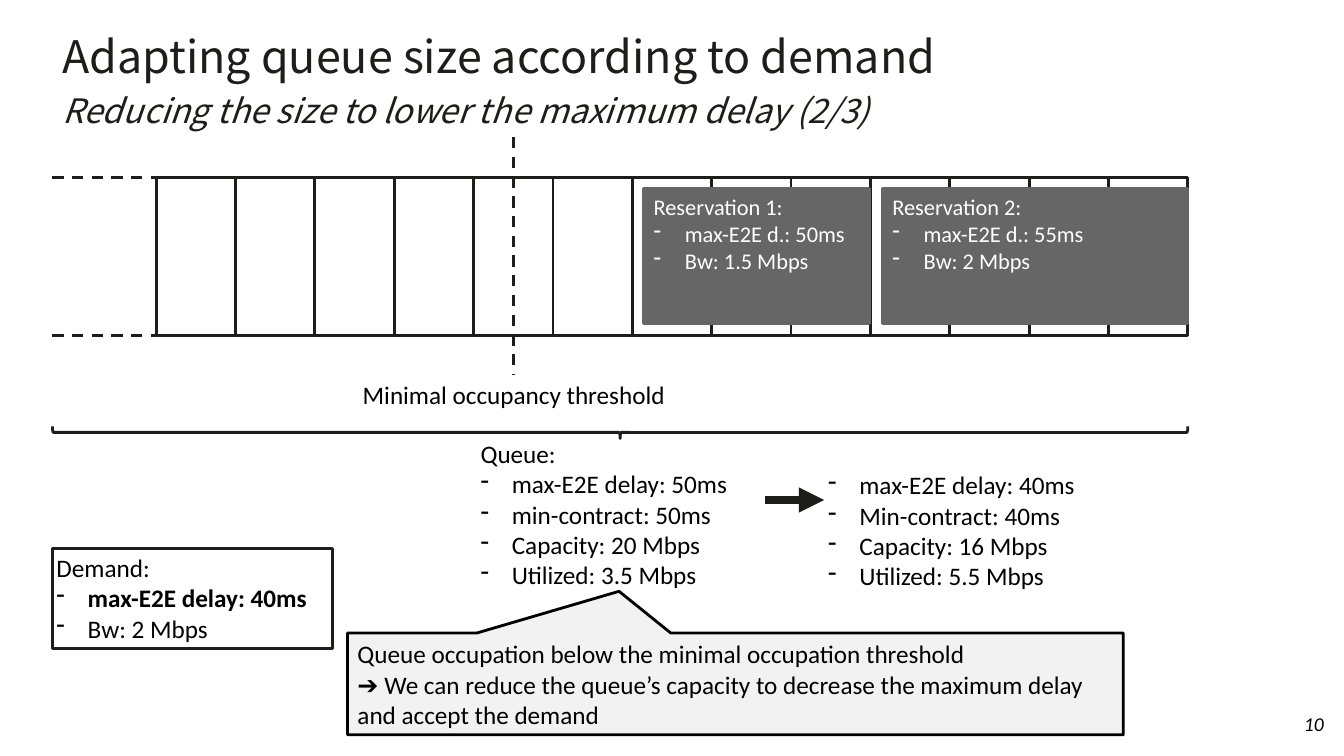
from pptx import Presentation
from pptx.dml.color import RGBColor
from pptx.enum.dml import MSO_LINE
from pptx.enum.shapes import MSO_CONNECTOR, MSO_SHAPE
from pptx.enum.text import MSO_ANCHOR, PP_ALIGN
from pptx.oxml.ns import qn
from pptx.util import Inches, Pt
from lxml.etree import SubElement

INK, BLACK, WHITE, GREY, PALE = "1D1D1A", "000000", "FFFFFF", "666666", "F2F2F2"

TITLE = [
    ("Adapting queue size according to demand", {}),
    ("Reducing the size to lower the maximum delay (2/3)", {"size": 24, "italic": True}),
]
BOOKED = [
    (8.76, 3.03, ["Reservation 2:", "- max-E2E d.: 55ms", "- Bw: 2 Mbps"]),
    (6.39, 2.24, ["Reservation 1:", "- max-E2E d.: 50ms", "- Bw: 1.5 Mbps"]),
]
DEMAND = ["Demand:", [("- max-E2E delay: 40ms", {"bold": True})], "- Bw: 2 Mbps"]
BEFORE = ["Queue:", "- max-E2E delay: 50ms", "- min-contract: 50ms",
          "- Capacity: 20 Mbps", "- Utilized: 3.5 Mbps"]
AFTER = ["- max-E2E delay: 40ms", "- Min-contract: 40ms",
         "- Capacity: 16 Mbps", "- Utilized: 5.5 Mbps"]
NOTE = ["Queue occupation below the minimal occupation threshold",
        "➔ We can reduce the queue’s capacity to decrease the maximum delay "
        "and accept the demand"]

LEFT, START, END = 0.52, 1.55, 11.79
TOP, HIGH, SLOTS = 1.76, 1.57, 13

deck = Presentation()
deck.slide_width, deck.slide_height = Inches(13.34), Inches(7.5)
slide = deck.slides.add_slide(deck.slide_layouts[6])
shapes = slide.shapes


def color(code):
    return RGBColor.from_string(code)


def bullet(para):
    props = para._p.get_or_add_pPr()
    props.set("marL", str(Inches(0.31)))
    props.set("indent", str(-Inches(0.31)))
    SubElement(props, qn("a:buChar")).set("char", "-")


def text(shape, lines, size=18, font="Calibri", ink=BLACK, bold=False, italic=False,
         align=PP_ALIGN.LEFT, anchor=MSO_ANCHOR.TOP, inset=(0, 0, 0, 0), space=None):
    frame = shape.text_frame
    frame.word_wrap = True
    frame.vertical_anchor = anchor
    (frame.margin_left, frame.margin_top,
     frame.margin_right, frame.margin_bottom) = map(Inches, inset)
    for row, line in enumerate(lines):
        para = frame.add_paragraph() if row else frame.paragraphs[0]
        para.alignment = align
        if space:
            para.line_spacing = space
        runs = [(line, {})] if isinstance(line, str) else line
        if runs[0][0].startswith("- "):
            bullet(para)
        for part, (words, own) in enumerate(runs):
            if part:
                para.add_line_break()
            run = para.add_run()
            run.text = words.removeprefix("- ")
            face = run.font
            face.name = font
            face.size = Pt(own.get("size", size))
            face.bold = own.get("bold", bold)
            face.italic = own.get("italic", italic)
            face.color.rgb = color(ink)


def label(left, top, width, height, lines, **style):
    box = shapes.add_textbox(*map(Inches, (left, top, width, height)))
    text(box, lines, **style)


def block(left, top, width, height, kind=MSO_SHAPE.RECTANGLE, fill=None, line=INK):
    shape = shapes.add_shape(kind, *map(Inches, (left, top, width, height)))
    shape.shadow.inherit = False
    if fill:
        shape.fill.solid()
        shape.fill.fore_color.rgb = color(fill)
    else:
        shape.fill.background()
    shape.line.color.rgb = color(line)
    shape.line.width = Pt(2)
    return shape


def rule(x1, y1, x2, y2, width=2, dash=None, head=False):
    line = shapes.add_connector(MSO_CONNECTOR.STRAIGHT, *map(Inches, (x1, y1, x2, y2)))
    line.line.color.rgb = color(INK)
    line.line.width = Pt(width)
    if dash:
        line.line.dash_style = dash
    if head:
        SubElement(line.line._get_or_add_ln(), qn("a:tailEnd")).set("type", "triangle")
    SubElement(line._element.spPr, qn("a:effectLst"))


PAD = (0.1, 0.05, 0.1, 0.05)
label(LEFT, 0.29, 12.25, 1.01, [TITLE], size=32, font="Noto Sans CJK SC", ink=INK,
      inset=PAD, space=Pt(34.4))
label(12.44, 7.1, 0.9, 0.4, ["10"], size=14, italic=True, align=PP_ALIGN.RIGHT,
      anchor=MSO_ANCHOR.BOTTOM, inset=(0, 0, 0.2, 0.2), space=0.85)

step = (END - START) / SLOTS
for slot in range(SLOTS):
    block(START + slot * step, TOP, step, HIGH)
for edge in (TOP, TOP + HIGH):
    rule(LEFT, edge, START, edge, dash=MSO_LINE.DASH)
for left, width, lines in BOOKED:
    text(block(left, 1.87, width, 1.34, fill=GREY, line=GREY), lines,
         size=16, ink=WHITE, inset=PAD)

mark = START + 4.5 * step
rule(mark, 1.36, mark, 3.72, dash=MSO_LINE.DASH)
label(mark - 1.57, 3.76, 3.15, 0.3, ["Minimal occupancy threshold"],
      align=PP_ALIGN.CENTER)

span = END - LEFT
brace = block((LEFT + END) / 2 - 0.06, 4.29 - span / 2, 0.12, span,
              kind=MSO_SHAPE.RIGHT_BRACE)
brace.rotation = 90

text(block(LEFT, 5.44, 2.78, 0.99), DEMAND, inset=(0.04,) * 4)
label(4.77, 4.35, 2.78, 1.51, BEFORE)
call = block(3.45, 6.28, 7.7, 1.01, kind=MSO_SHAPE.RECTANGULAR_CALLOUT,
             fill=PALE, line=BLACK)
call.adjustments[0], call.adjustments[1] = -0.15, -0.91
text(call, NOTE, anchor=MSO_ANCHOR.MIDDLE, inset=PAD)
label(8.22, 4.66, 2.78, 1.21, AFTER)
rule(7.59, 4.96, 8.18, 4.96, width=6, head=True)

deck.save("out.pptx")
